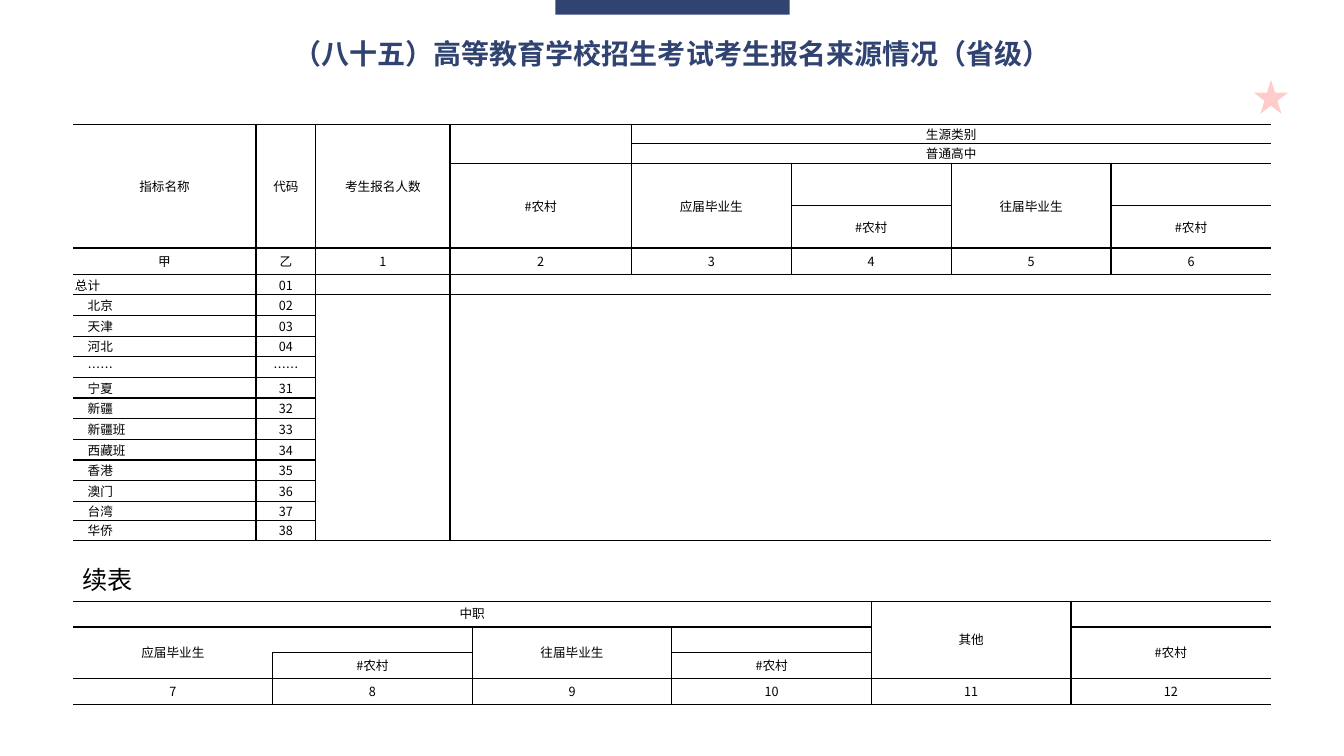
from lxml import etree
from pptx import Presentation
from pptx.dml.color import RGBColor
from pptx.enum.shapes import MSO_SHAPE
from pptx.enum.text import MSO_ANCHOR, MSO_AUTO_SIZE, PP_ALIGN
from pptx.oxml.ns import qn
from pptx.util import Cm, Pt

NAVY = RGBColor(0x30, 0x43, 0x71)
RED = RGBColor(0xFF, 0, 0)
BLACK = RGBColor(0, 0, 0)
CENTER, JUSTIFY = PP_ALIGN.CENTER, PP_ALIGN.JUSTIFY
MIDDLE = MSO_ANCHOR.MIDDLE
FIT_SHAPE = MSO_AUTO_SIZE.SHAPE_TO_FIT_TEXT
RECTANGLE, STAR = MSO_SHAPE.RECTANGLE, MSO_SHAPE.STAR_5_POINT
HAN_FONT, SYMBOL_FONT = "Times New Roman", "Noto Sans CJK SC"
NO_GRID_STYLE = "{2D5ABB26-0587-4C30-8999-92F81FD0307C}"
RURAL = "#农村"


def add_grid(top, widths, heights):
    """Add a table without style or lines, with the given column widths and row heights in cm."""
    frame = slide.shapes.add_table(len(heights), len(widths), Cm(1.84), Cm(top),
                                   Cm(sum(widths)), Cm(sum(heights)))
    table = frame.table
    table.first_row = table.horz_banding = False
    table._tbl.tblPr.find(qn("a:tableStyleId")).text = NO_GRID_STYLE
    for column, width in zip(table.columns, widths):
        column.width = Cm(width)
    for row, height in zip(table.rows, heights):
        row.height = Cm(height)
    return table


def fill_cell(table, row, col, text="", sides="LRTB", rows=1, cols=1,
              align=CENTER, indent=0, margin=0.05, spacing=None):
    """Merge the block at row, col, rule its sides (L, R, T, B) and write its text."""
    origin = table.cell(row, col)
    last_row, last_col = row + rows - 1, col + cols - 1
    if rows * cols > 1:
        origin.merge(table.cell(last_row, last_col))
    for r in range(row, last_row + 1):
        for c in range(col, last_col + 1):
            cell = table.cell(r, c)
            edges = {"L": c == col and c > 0,
                     "R": c == last_col and c < len(table.columns) - 1,
                     "T": r == row, "B": r == last_row}
            properties = cell._tc.get_or_add_tcPr()
            for side, on_edge in edges.items():
                if on_edge and side in sides:
                    line = etree.SubElement(properties, qn(f"a:ln{side}"), w=str(Pt(1)))
                    paint = etree.SubElement(line, qn("a:solidFill"))
                    etree.SubElement(paint, qn("a:srgbClr"), val=str(BLACK))
            cell.fill.background()
            cell.margin_left = cell.margin_right = Cm(margin)
            cell.margin_top = cell.margin_bottom = 0
            cell.text_frame.paragraphs[0].font.size = Pt(9)
    origin.vertical_anchor = MIDDLE
    para = origin.text_frame.paragraphs[0]
    para.alignment = align
    para.line_spacing = spacing
    para.font.color.rgb = BLACK
    if indent:
        para._p.get_or_add_pPr().set("indent", str(Cm(indent)))
    if text == RURAL:
        for part, font in (("#", SYMBOL_FONT), (text[1:], HAN_FONT)):
            span = para.add_run()
            span.text = part
            span.font.name = font
    else:
        para.font.name = SYMBOL_FONT if text.isascii() or text == "……" else HAN_FONT
        if text:
            para.add_run().text = text
        else:
            etree.SubElement(para._p, qn("a:endParaRPr"), sz="900")


deck = Presentation()
deck.slide_width, deck.slide_height = Cm(33.87), Cm(19.05)
slide = deck.slides.add_slide(deck.slide_layouts[6])

# Decoration
for kind, color, place in ((STAR, RED, (31.6, 2.01, 0.86, 0.86)),
                           (RECTANGLE, NAVY, (14, -0.03, 5.9, 0.4))):
    shape = slide.shapes.add_shape(kind, *map(Cm, place))
    shape.shadow.inherit = False
    shape.fill.solid()
    shape.fill.fore_color.rgb = color
    shape.line.fill.background()
    if kind == STAR:
        tint = shape._element.spPr.find(".//" + qn("a:srgbClr"))
        etree.SubElement(tint, qn("a:alpha"), val="20000")

# Headings
for text, place, size, color, title in (
    ("（八十五）高等教育学校招生考试考生报名来源情况（省级）", (7.06, 0.79, 19.76, 1.11), 20, NAVY, True),
    ("续表", (1.83, 14.43, 1.8, 0.74), 18, BLACK, False),
):
    box = slide.shapes.add_textbox(*map(Cm, place))
    box.text_frame.word_wrap = False
    box.text_frame.auto_size = FIT_SHAPE
    para = box.text_frame.paragraphs[0]
    para.text = text
    if title:
        para.alignment = CENTER
    else:
        para.line_spacing = Pt(12)
    para.font.name, para.font.size = "Arial", Pt(size)
    para.font.bold, para.font.color.rgb = title, color

# Main table: headers, column numbers, then one row per region
regions = [("总计", "01"), ("北京", "02"), ("天津", "03"), ("河北", "04"), ("……", "……"),
           ("宁夏", "31"), ("新疆", "32"), ("新疆班", "33"), ("西藏班", "34"),
           ("香港", "35"), ("澳门", "36"), ("台湾", "37"), ("华侨", "38")]
main = add_grid(3.13, [4.61, 1.51, 3.38, 4.57] + [4.03] * 4,
                [0.49, 0.49, 1.07, 1.07, 0.66] + [0.52] * 11 + [0.49] * 2)
for row, col, rows, cols, text, sides in (
    (0, 0, 4, 1, "指标名称", "LRTB"),
    (0, 1, 4, 1, "代码", "LRTB"),
    (0, 2, 4, 1, "考生报名人数", "LTB"),
    (0, 3, 2, 1, "", "RTB"),
    (0, 4, 1, 4, "生源类别", "LTB"),
    (1, 4, 1, 4, "普通高中", "LTB"),
    (2, 3, 2, 1, RURAL, "LRTB"),
    (2, 4, 2, 1, "应届毕业生", "LTB"),
    (2, 5, 1, 1, "", "RTB"),
    (2, 6, 2, 1, "往届毕业生", "LTB"),
    (2, 7, 1, 1, "", "RTB"),
    (3, 5, 1, 1, RURAL, "LRTB"),
    (3, 7, 1, 1, RURAL, "LRTB"),
):
    fill_cell(main, row, col, text, sides, rows, cols)
for col, text in enumerate("甲乙123456"):
    fill_cell(main, 4, col, text)
for row, (region, code) in enumerate(regions, start=5):
    fill_cell(main, row, 0, region, align=JUSTIFY, indent=0 if row == 5 else 0.32)
    fill_cell(main, row, 1, code)
    outer = {5: "T", 17: "B"}.get(row, "")
    for col in range(2, 8):
        fill_cell(main, row, col, sides=outer + ("L" if col == 2 else ""))

# Continued table
continued = add_grid(15.15, [5.03] * 6, [0.65] * 4)
blocks = [
    (0, 0, 1, 4, "中职", "LRTB"),
    (0, 4, 3, 1, "其他", "LTB"),
    (0, 5, 1, 1, "", "RTB"),
    (1, 5, 2, 1, RURAL, "LRTB"),
]
for col, text in ((0, "应届毕业生"), (2, "往届毕业生")):
    blocks += [(1, col, 2, 1, text, "LTB"),
               (1, col + 1, 1, 1, "", "RTB"),
               (2, col + 1, 1, 1, RURAL, "LRTB")]
blocks += [(3, col, 1, 1, str(col + 7), "LRTB") for col in range(6)]
for row, col, rows, cols, text, sides in blocks:
    fill_cell(continued, row, col, text, sides, rows, cols, margin=0.18, spacing=Pt(12))

deck.save("out.pptx")
